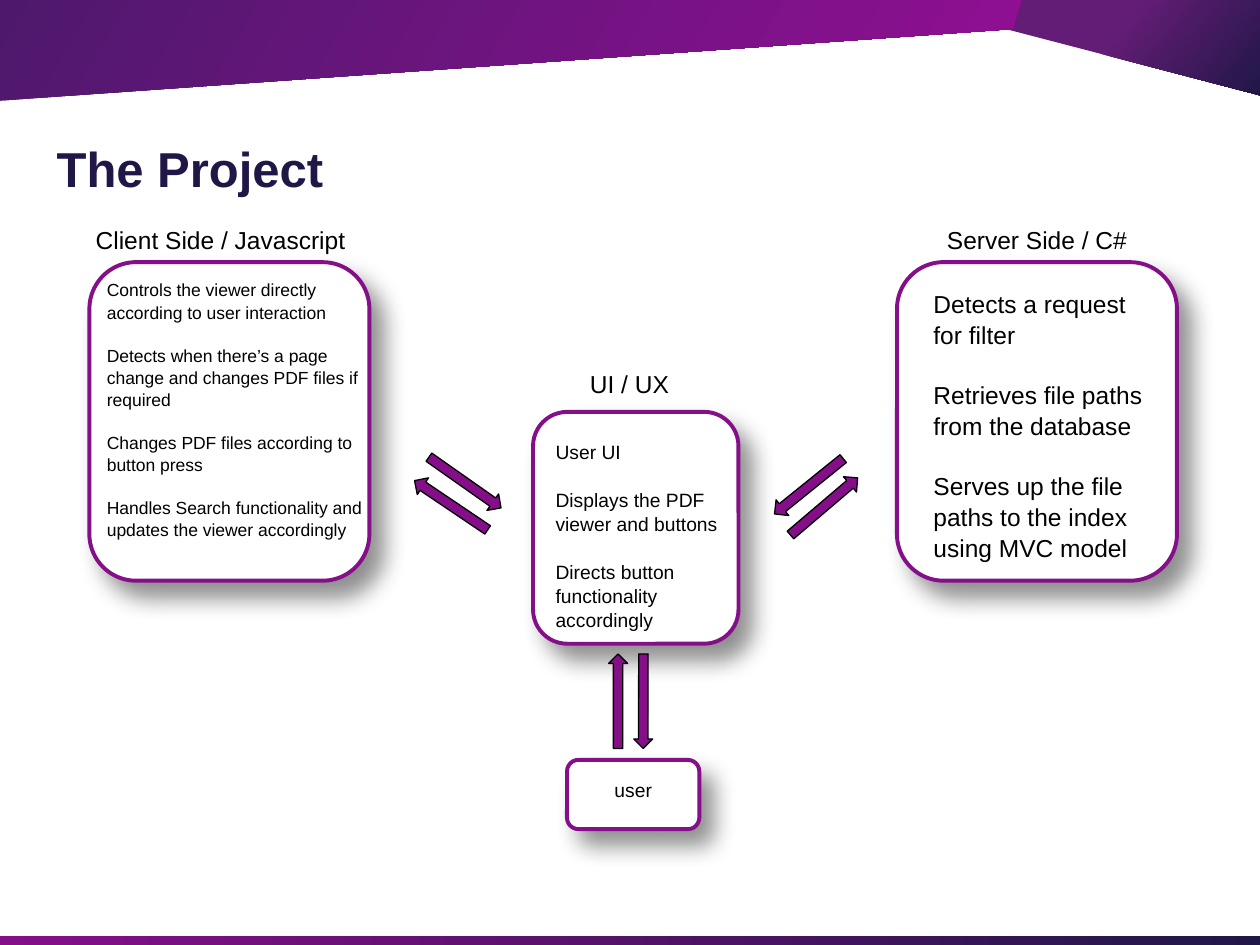
from lxml.etree import SubElement
from pptx import Presentation
from pptx.dml.color import RGBColor
from pptx.enum.shapes import MSO_SHAPE as Shape
from pptx.enum.text import MSO_ANCHOR as Anchor, MSO_AUTO_SIZE as AutoSize, PP_ALIGN as Align
from pptx.oxml.ns import qn
from pptx.util import Pt

PURPLE, NAVY, BLACK, WHITE = "850F89", "201747", "000000", "FFFFFF"
MARGINS = {f"margin_{side}": Pt(7.2) for side in ("left", "top", "right", "bottom")}


def color(hex_value):
    return RGBColor.from_string(hex_value)


def apply(target, formats):
    for name, value in formats.items():
        setattr(target, name, value)


def place(left, top, width, height):
    return Pt(left), Pt(top), Pt(width), Pt(height)


def write(frame, paragraphs, size, align=Align.LEFT, ink=BLACK, bold=False, spacing=1.05):
    frame.text = "\n".join(paragraphs)
    for index, paragraph in enumerate(frame.paragraphs):
        apply(paragraph, {"alignment": align, "line_spacing": spacing,
                          "space_before": Pt(size * 1.2 if index else 0)})
        apply(paragraph.font, {"name": "Arial", "size": Pt(size), "bold": bold})
        paragraph.font.color.rgb = color(ink)


def add_text(slide, box, paragraphs, size, align=Align.LEFT):
    frame = slide.shapes.add_textbox(*place(*box)).text_frame
    apply(frame, {**MARGINS, "word_wrap": True, "auto_size": AutoSize.SHAPE_TO_FIT_TEXT})
    write(frame, paragraphs, size, align)


def add_solid(slide, preset, box, fill, outline, weight):
    shape = slide.shapes.add_shape(preset, *place(*box))
    shape.shadow.inherit = False
    shape.fill.solid()
    shape.fill.fore_color.rgb = color(fill)
    shape.line.color.rgb = color(outline)
    shape.line.width = Pt(weight)
    return shape


def shade(shape, stops, angle):
    shape.shadow.inherit = False
    shape.line.fill.background()
    shape.fill.gradient()
    shape.fill.gradient_angle = -angle % 360
    for stop, (position, hex_value) in zip(shape.fill.gradient_stops, stops):
        stop.position = position
        stop.color.rgb = color(hex_value)


def add_facet(slide, points, stops, angle):
    start, *rest = [(Pt(x), Pt(y)) for x, y in points]
    builder = slide.shapes.build_freeform(*start, scale=1.0)
    builder.add_line_segments(rest, close=True)
    shade(builder.convert_to_shape(), stops, angle)


def add_banner(slide, box):
    left, top, width, height = box
    right, fold = left + width, top + 17.3
    add_facet(slide, [(left + 581.8, top), (right, top), (right, top + 55.4), (left + 576, fold)],
              [(0.4, "641D76"), (1, NAVY)], 40)
    add_facet(slide, [(left, top + height), (left, top), (left + 585.3, top), (left + 580.3, fold)],
              [(0, "4E196D"), (1, "900F93")], 30)


def add_footer_bar(slide, box):
    bar = slide.shapes.add_shape(Shape.RECTANGLE, *place(*box))
    shade(bar, [(0, PURPLE), (1, NAVY)], 0)


def add_title(slide, box, wording):
    title = slide.shapes.title
    apply(title, dict(zip(("left", "top", "width", "height"), place(*box))))
    apply(title.text_frame, {**MARGINS, "word_wrap": True, "auto_size": AutoSize.NONE,
                             "vertical_anchor": Anchor.BOTTOM})
    write(title.text_frame, [wording], 28, ink=NAVY, bold=True, spacing=1.0)


def add_module(slide, box, inner, paragraphs, size, align=Align.LEFT, label=None, heading=None):
    left, top, width, height = box
    card = add_solid(slide, Shape.ROUNDED_RECTANGLE, box, WHITE, PURPLE, 2.25)
    effects = card.element.spPr.find(qn("a:effectLst"))
    shadow = SubElement(effects, qn("a:outerShdw"), blurRad=str(Pt(13.5)), dist=str(Pt(11.2)),
                        dir=str(49 * 60000), algn="tl", rotWithShape="0")
    tint = SubElement(shadow, qn("a:srgbClr"), val=BLACK)
    SubElement(tint, qn("a:alpha"), val="44000")
    dx, dy, inner_width, inner_height = inner
    add_text(slide, (left + dx, top + dy, inner_width, inner_height), paragraphs, size, align)
    if label:
        dx, dy, label_width = heading
        add_text(slide, (left + dx, top + dy, label_width, 31.7), [label], 14, Align.CENTER)


def add_arrow(slide, center, length, thickness, rotation):
    x, y = center
    box = (x - length / 2, y - thickness / 2, length, thickness)
    add_solid(slide, Shape.RIGHT_ARROW, box, PURPLE, BLACK, 0.75).rotation = rotation


def main():
    deck = Presentation()
    apply(deck, {"slide_width": Pt(720), "slide_height": Pt(540)})
    slide = deck.slides.add_slide(deck.slide_layouts[5])

    add_banner(slide, (-1.4, -0.7, 722.1, 58.3))
    add_footer_bar(slide, (0, 535, 720.7, 5.8))
    add_title(slide, (25.2, 69.8, 625.7, 50.4), "The Project")

    add_module(slide, (512.6, 149.8, 160, 182), (13.7, 7.2, 138.2, 167),
               ["Detects a request for filter",
                "Retrieves file paths from the database",
                "Serves up the file paths to the index using MVC model"], 14,
               label="Server Side / C#", heading=(15.9, -29.5, 128.2))
    add_module(slide, (51.1, 149.8, 160, 182), (2.9, 2.1, 160, 172),
               ["Controls the viewer directly according to user interaction",
                "Detects when there’s a page change and changes PDF files if required",
                "Changes PDF files according to button press",
                "Handles Search functionality and updates the viewer accordingly"], 10,
               label="Client Side / Javascript", heading=(-5, -29.5, 160))
    add_module(slide, (304.6, 235.4, 117.4, 132.5), (5.8, 8.6, 117.4, 121),
               ["User UI",
                "Displays the PDF viewer and buttons",
                "Directs button functionality accordingly"], 11,
               label="UI / UX", heading=(17.3, -32.4, 75.6))
    add_module(slide, (324, 434.2, 75.6, 39.6), (13, 2.9, 49.7, 28.1),
               ["user"], 11, Align.CENTER)

    for center, rotation in [((265.7, 275.8), 35.1), ((257.8, 288.7), 214),
                             ((470.9, 289.4), 319.6), ((462.2, 277.9), 141.1)]:
        add_arrow(slide, center, 50.4, 11.5, rotation)
    for center, rotation in [((367.6, 400.7), 90.1), ((353.2, 400.7), 270)]:
        add_arrow(slide, center, 54, 10.8, rotation)

    deck.save("out.pptx")


if __name__ == "__main__":
    main()
